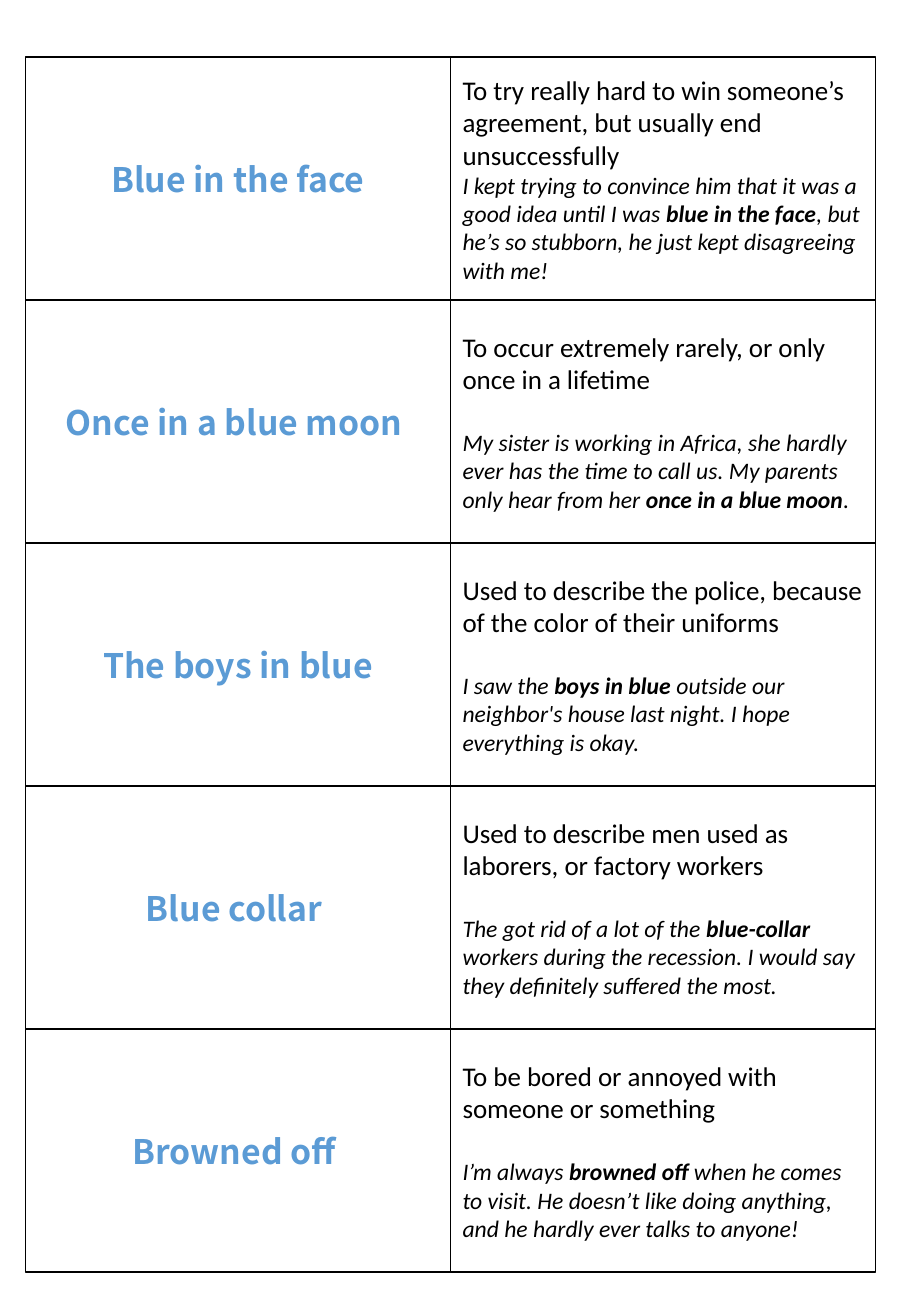
from pptx import Presentation
from pptx.dml.color import RGBColor
from pptx.enum.shapes import MSO_SHAPE as SHAPE
from pptx.enum.text import MSO_ANCHOR as ANCHOR, PP_ALIGN as ALIGN
from pptx.util import Inches, Pt

BLACK = RGBColor(0x00, 0x00, 0x00)
WHITE = RGBColor(0xFF, 0xFF, 0xFF)
BLUE = RGBColor(0x5B, 0x9B, 0xD5)
IDIOM_FONT, BODY_FONT = "Noto Sans CJK KR", "Calibri"
LEFT, TOP, CARD_W, CARD_H = 0.21, 0.47, 3.5, 2

CARDS = [
    ("Blue in the face",
     "To try really hard to win someone’s agreement, but usually end unsuccessfully",
     ("I kept trying to convince him that it was a good idea until I was",
      " blue in the face",
      ", but he’s so stubborn, he just kept disagreeing with me!"), 0),
    ("Once in a blue moon ",
     "To occur extremely rarely, or only once in a lifetime",
     ("My sister is working in Africa, she hardly ever has the time to call us. "
      "My parents only hear from her ",
      "once in a blue moon", "."), 19.5),
    ("The boys in blue",
     "Used to describe the police, because of the color of their uniforms",
     ("I saw the ", "boys in blue",
      " outside our neighbor's house last night. I hope everything is okay."), 19.5),
    ("Blue collar ",
     "Used to describe men used as laborers, or factory workers",
     ("The got rid of a lot of the", " blue-collar",
      " workers during the recession. I would say they definitely suffered the most."),
     19.5),
    ("Browned off ",
     "To be bored or annoyed with someone or something",
     ("I’m always ", "browned off",
      " when he comes to visit. He doesn’t like doing anything, "
      "and he hardly ever talks to anyone!"), 19.5),
]


def add_run(p, text, size, font=BODY_FONT, color=BLACK, bold=False, italic=False):
    """Append one formatted run to a paragraph."""
    r = p.add_run()
    r.text = text
    r.font.name, r.font.size = font, Pt(size)
    r.font.bold, r.font.italic = bold, italic
    r.font.color.rgb = color


def add_card(s, x, y, w, h):
    """Draw an outlined white card and return its text frame."""
    sp = s.shapes.add_shape(SHAPE.RECTANGLE, Inches(x), Inches(y), Inches(w), Inches(h))
    sp.shadow.inherit = False
    sp.fill.solid()
    sp.fill.fore_color.rgb = WHITE
    sp.line.color.rgb = BLACK
    sp.line.width = Pt(1)
    tf = sp.text_frame
    tf.word_wrap = True
    tf.vertical_anchor = ANCHOR.MIDDLE
    return tf


def add_idiom(s, x, y, w, h, idiom):
    """Draw the card that names the idiom."""
    p = add_card(s, x, y, w, h).paragraphs[0]
    p.alignment = ALIGN.CENTER
    add_run(p, idiom, 20, IDIOM_FONT, BLUE, bold=True)


def add_meaning(s, x, y, w, h, meaning, example, gap):
    """Draw the card with the meaning and an example that stresses the idiom."""
    tf = add_card(s, x, y, w, h)
    p = tf.paragraphs[0]
    p.alignment = ALIGN.LEFT
    add_run(p, meaning, 16)
    p = tf.add_paragraph()
    p.alignment = ALIGN.LEFT
    p.space_before = Pt(gap)
    for i, text in enumerate(example):
        add_run(p, text, 14, bold=i == 1, italic=True)


def main():
    """Build the sheet of idiom cards."""
    prs = Presentation()
    prs.slide_width, prs.slide_height = Inches(7.5), Inches(10.83)
    s = prs.slides.add_slide(prs.slide_layouts[6])
    for row, (idiom, meaning, example, gap) in enumerate(CARDS):
        y = TOP + row * CARD_H
        add_idiom(s, LEFT, y, CARD_W, CARD_H, idiom)
        add_meaning(s, LEFT + CARD_W, y, CARD_W, CARD_H, meaning, example, gap)
    prs.save("out.pptx")


if __name__ == "__main__":
    main()
